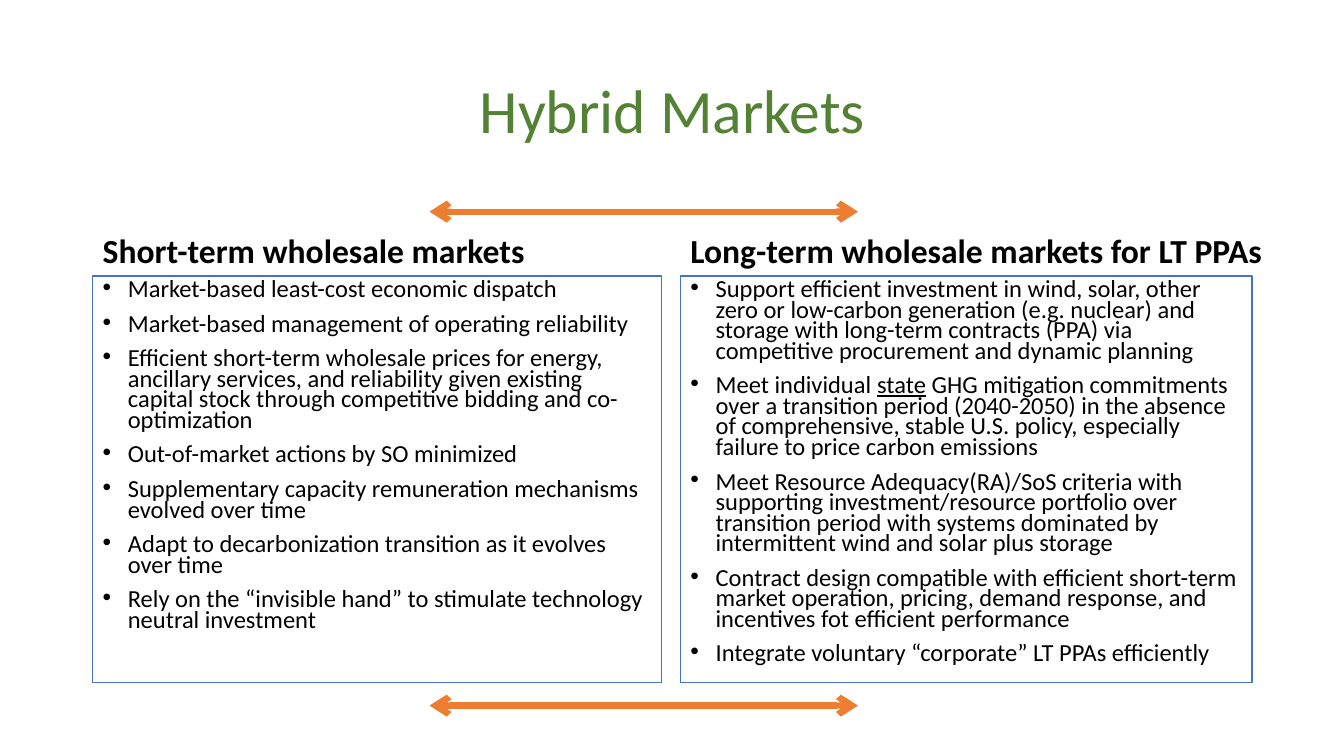
from lxml.etree import SubElement
from pptx import Presentation
from pptx.dml.color import RGBColor as RGB
from pptx.enum.shapes import MSO_CONNECTOR as Line, MSO_SHAPE as Shape
from pptx.enum.text import MSO_ANCHOR as Anchor, MSO_AUTO_SIZE as Fit, PP_ALIGN as Align
from pptx.oxml.ns import qn
from pptx.util import Inches, Pt

COLORS = {"title": "548235", "text": "000000", "fill": "FFFFFF",
          "border": "4472C4", "arrow": "ED7D31"}
TITLE = {"size": Pt(44)}
HEAD = {"size": Pt(24), "bold": True}
BODY = {"size": Pt(17.5)}
HEAD_PARA = {"alignment": Align.LEFT, "line_spacing": 0.9, "space_before": Pt(10)}
BODY_PARA = {**HEAD_PARA, "line_spacing": 0.7}
TITLE_PARA = {"alignment": Align.CENTER, "line_spacing": 0.9}

# Left, heading width, box width, heading, points; underscores mark underlined words
COLUMNS = [
    (0.92, 5.64, 5.64, "Short-term wholesale markets", [
        "Market-based least-cost economic dispatch",
        "Market-based management of operating reliability",
        "Efficient short-term wholesale prices for energy, ancillary services, and "
        "reliability given existing capital stock through competitive bidding and "
        "co-optimization",
        "Out-of-market actions by SO minimized",
        "Supplementary capacity remuneration mechanisms evolved over time",
        "Adapt to decarbonization transition as it evolves over time",
        "Rely on the “invisible hand” to stimulate technology neutral investment",
    ]),
    (6.75, 5.93, 5.67, "Long-term wholesale markets for LT PPAs", [
        "Support efficient investment in wind, solar, other zero or low-carbon "
        "generation (e.g. nuclear) and storage with long-term contracts (PPA) via "
        "competitive procurement and dynamic planning",
        "Meet individual _state_ GHG mitigation commitments over a transition period "
        "(2040-2050) in the absence of comprehensive, stable U.S. policy, especially "
        "failure to price carbon emissions",
        "Meet Resource Adequacy(RA)/SoS criteria with supporting investment/resource "
        "portfolio over transition period with systems dominated by intermittent wind "
        "and solar plus storage",
        "Contract design compatible with efficient short-term market operation, "
        "pricing, demand response, and incentives fot efficient performance",
        "Integrate voluntary “corporate” LT PPAs efficiently",
    ]),
]


def color(name):
    return RGB.from_string(COLORS[name])


def assign(item, values):
    for name, value in values.items():
        setattr(item, name, value)


def set_frame(frame, anchor):
    assign(frame, {"word_wrap": True, "auto_size": Fit.NONE,
                   "vertical_anchor": anchor})


def write(para, text, font, layout, ink="text"):
    """Fill a paragraph, underlining the parts between underscores."""
    assign(para, layout)
    for i, part in enumerate(text.split("_")):
        run = para.add_run()
        run.text = part
        assign(run.font, {"name": "Calibri", **font})
        run.font.color.rgb = color(ink)
        if i % 2:
            run.font.underline = True


def add_bullet(para):
    props = para._p.get_or_add_pPr()
    props.set("marL", str(Inches(0.25)))
    props.set("indent", str(-Inches(0.25)))
    SubElement(props, qn("a:buFont"), typeface="Arial")
    SubElement(props, qn("a:buChar"), char="•")


def set_title(slide, text):
    title = slide.shapes.title
    assign(title, {"left": Inches(0.92), "top": Inches(0.4),
                   "width": Inches(11.5), "height": Inches(1.45)})
    set_frame(title.text_frame, Anchor.MIDDLE)
    write(title.text_frame.paragraphs[0], text, TITLE, TITLE_PARA, "title")


def add_head(slide, left, width, text):
    box = slide.shapes.add_textbox(Inches(left), Inches(1.84), Inches(width), Inches(0.9))
    set_frame(box.text_frame, Anchor.BOTTOM)
    write(box.text_frame.paragraphs[0], text, HEAD, HEAD_PARA)


def add_list(slide, left, width, points):
    box = slide.shapes.add_shape(Shape.RECTANGLE, Inches(left), Inches(2.74),
                                 Inches(width), Inches(4.03))
    box.shadow.inherit = False
    box.fill.solid()
    box.fill.fore_color.rgb = color("fill")
    box.line.color.rgb = color("border")
    box.line.width = Pt(1)
    frame = box.text_frame
    set_frame(frame, Anchor.TOP)
    for i, point in enumerate(points):
        para = frame.add_paragraph() if i else frame.paragraphs[0]
        write(para, point, BODY, BODY_PARA)
        add_bullet(para)


def add_arrow(slide, top):
    """Draw a level arrow with a head at each end."""
    arrow = slide.shapes.add_connector(Line.STRAIGHT, Inches(4.26), Inches(top),
                                       Inches(8.51), Inches(top))
    arrow.line.color.rgb = color("arrow")
    arrow.line.width = Pt(4.5)
    stroke = arrow.line._get_or_add_ln()
    for end in ("a:headEnd", "a:tailEnd"):
        SubElement(stroke, qn(end), type="arrow")
    SubElement(arrow._element.spPr, qn("a:effectLst"))


def main():
    deck = Presentation()
    deck.slide_width, deck.slide_height = Inches(13.33), Inches(7.5)
    slide = deck.slides.add_slide(deck.slide_layouts.get_by_name("Title Only"))
    set_title(slide, "Hybrid Markets")
    for left, head_width, box_width, head, points in COLUMNS:
        add_head(slide, left, head_width, head)
        add_list(slide, left, box_width, points)
    for top in (2.1, 7):
        add_arrow(slide, top)
    deck.save("out.pptx")


if __name__ == "__main__":
    main()
